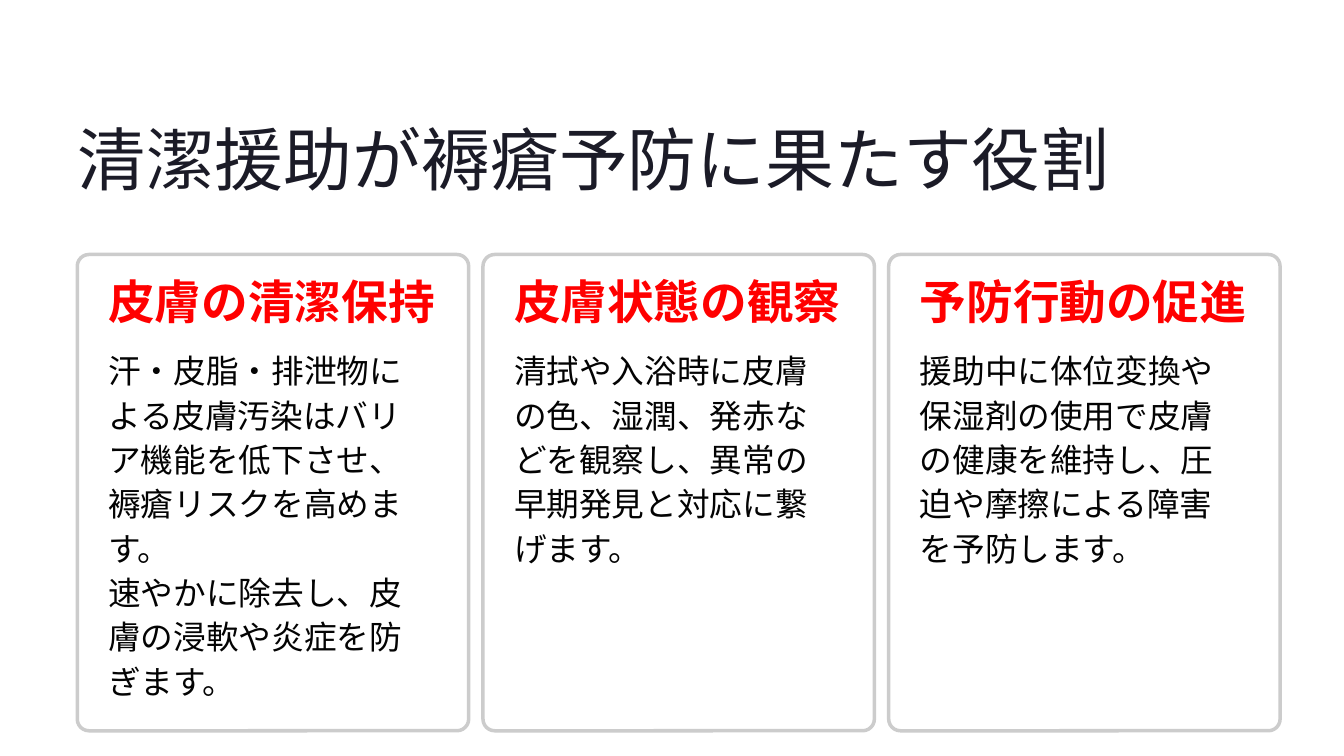
"""Build a slide on how hygiene care helps prevent pressure ulcers."""
from lxml.etree import SubElement
from pptx import Presentation
from pptx.dml.color import RGBColor
from pptx.enum.shapes import MSO_SHAPE
from pptx.enum.text import MSO_ANCHOR, MSO_AUTO_SIZE, PP_ALIGN
from pptx.oxml.ns import qn
from pptx.util import Inches, Pt

TITLE = "清潔援助が褥瘡予防に果たす役割"
CARDS = [
    ("皮膚の清潔保持", [
        "汗・皮脂・排泄物による皮膚汚染はバリア機能を低下させ、褥瘡リスクを高めます。",
        "速やかに除去し、皮膚の浸軟や炎症を防ぎます。",
    ]),
    ("皮膚状態の観察", [
        "清拭や入浴時に皮膚の色、湿潤、発赤などを観察し、異常の早期発見と対応に繋げます。",
    ]),
    ("予防行動の促進", [
        "援助中に体位変換や保湿剤の使用で皮膚の健康を維持し、圧迫や摩擦による障害を予防します。",
    ]),
]

WHITE = RGBColor(0xFF, 0xFF, 0xFF)
BORDER = RGBColor(0xCC, 0xCC, 0xCC)
NAVY = RGBColor(0x1B, 0x1B, 0x27)
RED = RGBColor(0xFF, 0x00, 0x00)
BLACK = RGBColor(0x03, 0x03, 0x03)

TITLE_FONT = {"name": "Inter", "size": Pt(59), "bold": False}
HEADING_FONT = {"name": "Inter", "size": Pt(40), "bold": True}
BODY_FONT = {"name": "Cabin", "size": Pt(28), "bold": False}

LEFT, CARD_TOP = 0.92, 3.03
CARD_WIDTH, CARD_HEIGHT, CARD_STEP = 4.66, 5.67, 4.83
PADDING, TEXT_WIDTH = 0.37, 3.75
HEADING_TOP, BODY_TOP = 3.4, 4.12
LINE_INCHES = 38 / 72


def write(box, lines, font, color, spacing, wrap):
    """Fill a box with left-aligned paragraphs in one format."""
    frame = box.text_frame
    frame_format = {
        "margin_left": 0, "margin_top": 0, "margin_right": 0, "margin_bottom": 0,
        "word_wrap": wrap, "auto_size": MSO_AUTO_SIZE.NONE,
        "vertical_anchor": MSO_ANCHOR.TOP,
    }
    for name, value in frame_format.items():
        setattr(frame, name, value)
    for index, line in enumerate(lines):
        para = frame.add_paragraph() if index else frame.paragraphs[0]
        para.alignment = PP_ALIGN.LEFT
        para.line_spacing = Pt(spacing)
        span = para.add_run()
        span.text = line
        for name, value in font.items():
            setattr(span.font, name, value)
        span.font.color.rgb = color


def add_panel(page, left):
    """Draw the rounded, slightly transparent panel of a card."""
    panel = page.shapes.add_shape(
        MSO_SHAPE.ROUNDED_RECTANGLE, Inches(left), Inches(CARD_TOP),
        Inches(CARD_WIDTH), Inches(CARD_HEIGHT))
    panel.adjustments[0] = 0.03
    panel.shadow.inherit = False
    panel.fill.solid()
    panel.fill.fore_color.rgb = WHITE
    fill_color = panel.fill._xPr.find(qn("a:solidFill"))[0]
    SubElement(fill_color, qn("a:alpha")).set("val", "95000")
    panel.line.color.rgb = BORDER
    panel.line.width = Pt(3)


def add_card(page, left, heading, lines):
    """Add a panel with its heading and body text."""
    add_panel(page, left)
    body_rows = 6 if len(lines) > 1 else 4
    blocks = [
        (HEADING_TOP, 0.52, [heading], HEADING_FONT, RED, 37, False),
        (BODY_TOP, body_rows * LINE_INCHES, lines, BODY_FONT, BLACK, 38, True),
    ]
    for top, height, *content in blocks:
        box = page.shapes.add_textbox(
            Inches(left + PADDING), Inches(top), Inches(TEXT_WIDTH), Inches(height))
        write(box, *content)


def main():
    """Create and save the deck."""
    deck = Presentation()
    deck.slide_width, deck.slide_height = Inches(16), Inches(9)
    page = deck.slides.add_slide(deck.slide_layouts[5])
    title = page.shapes.title
    title.left, title.top = Inches(LEFT), Inches(1.34)
    title.width, title.height = Inches(12.38), Inches(1.03)
    write(title, [TITLE], TITLE_FONT, NAVY, 74, False)
    for index, (heading, lines) in enumerate(CARDS):
        add_card(page, LEFT + index * CARD_STEP, heading, lines)
    deck.save("out.pptx")


if __name__ == "__main__":
    main()
